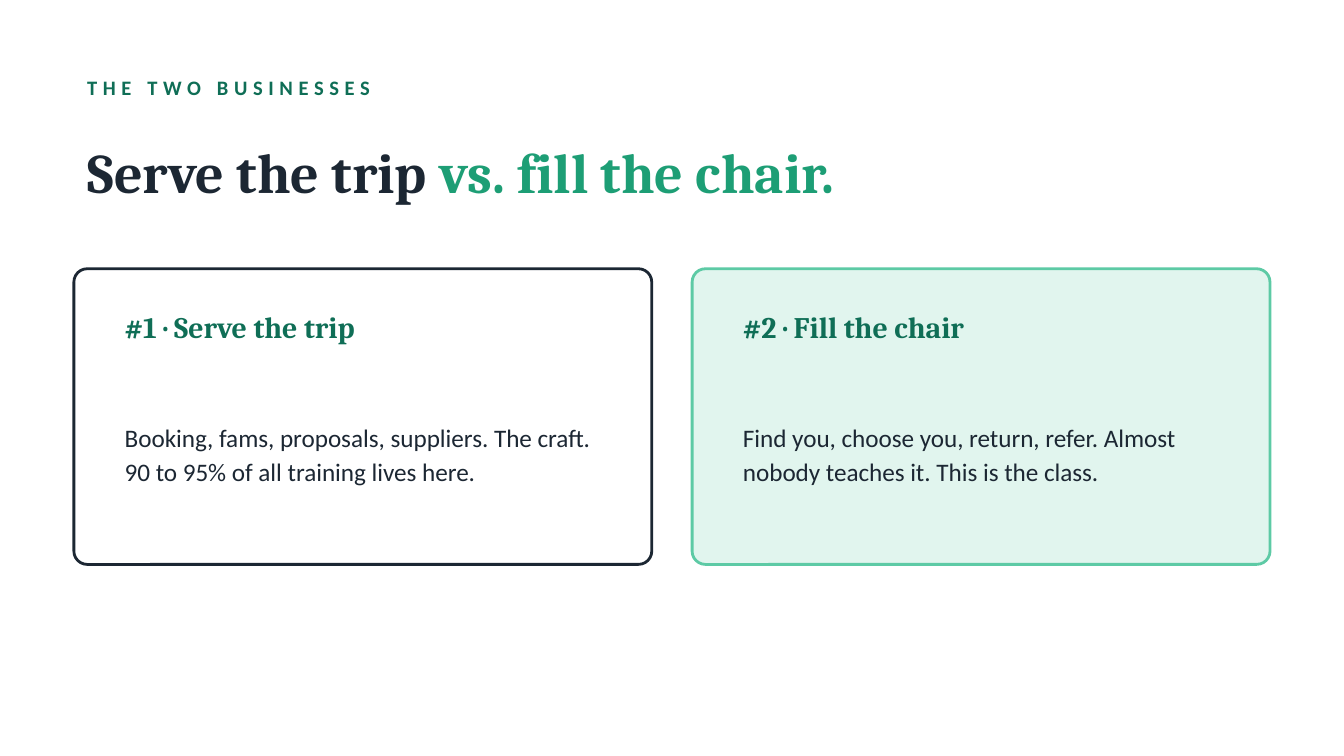
from pptx import Presentation
from pptx.dml.color import RGBColor
from pptx.enum.shapes import MSO_SHAPE
from pptx.enum.text import MSO_ANCHOR, MSO_AUTO_SIZE, PP_ALIGN
from pptx.util import Inches, Pt

ROUND = MSO_SHAPE.ROUNDED_RECTANGLE
MIDDLE = MSO_ANCHOR.MIDDLE
NO_FIT = MSO_AUTO_SIZE.NONE
LEFT = PP_ALIGN.LEFT

WHITE = RGBColor(0xFF, 0xFF, 0xFF)
INK = RGBColor(0x1C, 0x27, 0x33)
DEEP = RGBColor(0x0F, 0x6E, 0x56)
GREEN = RGBColor(0x1D, 0x9E, 0x75)
MINT = RGBColor(0x5D, 0xCA, 0xA5)
PALE = RGBColor(0xE1, 0xF5, 0xEE)

HEAD, BODY = "Cambria", "Calibri"

# Grid in inches: a 16:9 page, two equal columns between the margins
WIDE = 10
HIGH = WIDE * 9 / 16
EDGE, GAP = 0.55, 0.3
FULL = WIDE - 2 * EDGE
COL = (FULL - GAP) / 2
TOP, TALL = 2, 2.2
PAD, INNER = 0.28, 3.8

CARDS = [
    ("#1 · Serve the trip",
     "Booking, fams, proposals, suppliers. The craft. "
     "90 to 95% of all training lives here.", WHITE, INK),
    ("#2 · Fill the chair",
     "Find you, choose you, return, refer. Almost "
     "nobody teaches it. This is the class.", PALE, MINT),
]


def inches(*sizes):
    return [Inches(size) for size in sizes]


def add_run(para, text, face, size, color, bold=False):
    run = para.add_run()
    run.text = text
    font = run.font
    font.name, font.size, font.bold = face, Pt(size), bold
    font.color.rgb = color
    return run


def set_frame(shape):
    """Format the text frame and return its first paragraph."""
    frame = shape.text_frame
    frame.word_wrap = True
    frame.auto_size = NO_FIT
    frame.vertical_anchor = MIDDLE
    para = frame.paragraphs[0]
    para.alignment = LEFT
    return para


def add_label(slide, box, *style, bold=False, lead=None, track=None):
    para = set_frame(slide.shapes.add_textbox(*inches(*box)))
    if lead:
        para.line_spacing = lead
    run = add_run(para, *style, bold=bold)
    if track:
        run.font._element.set("spc", str(track * 100))


def set_title(slide, box, parts):
    title = slide.shapes.title
    title.left, title.top, title.width, title.height = inches(*box)
    para = set_frame(title)
    para.line_spacing = 1.0
    para.space_before = Pt(0)
    for text, color in parts:
        add_run(para, text, HEAD, 30, color, bold=True)


def add_card(slide, col, head, text, fill, line):
    left = EDGE + col * (COL + GAP)
    card = slide.shapes.add_shape(ROUND, *inches(left, TOP, COL, TALL))
    card.adjustments[0] = 0.045
    card.shadow.inherit = False
    card.fill.solid()
    card.fill.fore_color.rgb = fill
    card.line.color.rgb = line
    card.line.width = Pt(1.5)
    left += PAD
    add_label(slide, (left, TOP + 0.18, INNER, 0.5),
              head, HEAD, 16, DEEP, bold=True)
    add_label(slide, (left, TOP + 0.72, INNER, 1.3),
              text, BODY, 13.5, INK, lead=1.1)


def main():
    deck = Presentation()
    deck.slide_width, deck.slide_height = inches(WIDE, HIGH)
    slide = deck.slides.add_slide(deck.slide_layouts[5])
    slide.background.fill.solid()
    slide.background.fill.fore_color.rgb = WHITE

    # Heading
    add_label(slide, (EDGE, 0.5, FULL, 0.3), "THE TWO BUSINESSES",
              BODY, 11, DEEP, bold=True, track=3)
    set_title(slide, (EDGE, 0.85, FULL, 0.85),
              [("Serve the trip ", INK), ("vs. fill the chair.", GREEN)])

    # Cards, one per column
    for col, card in enumerate(CARDS):
        add_card(slide, col, *card)

    deck.save("out.pptx")


if __name__ == "__main__":
    main()
